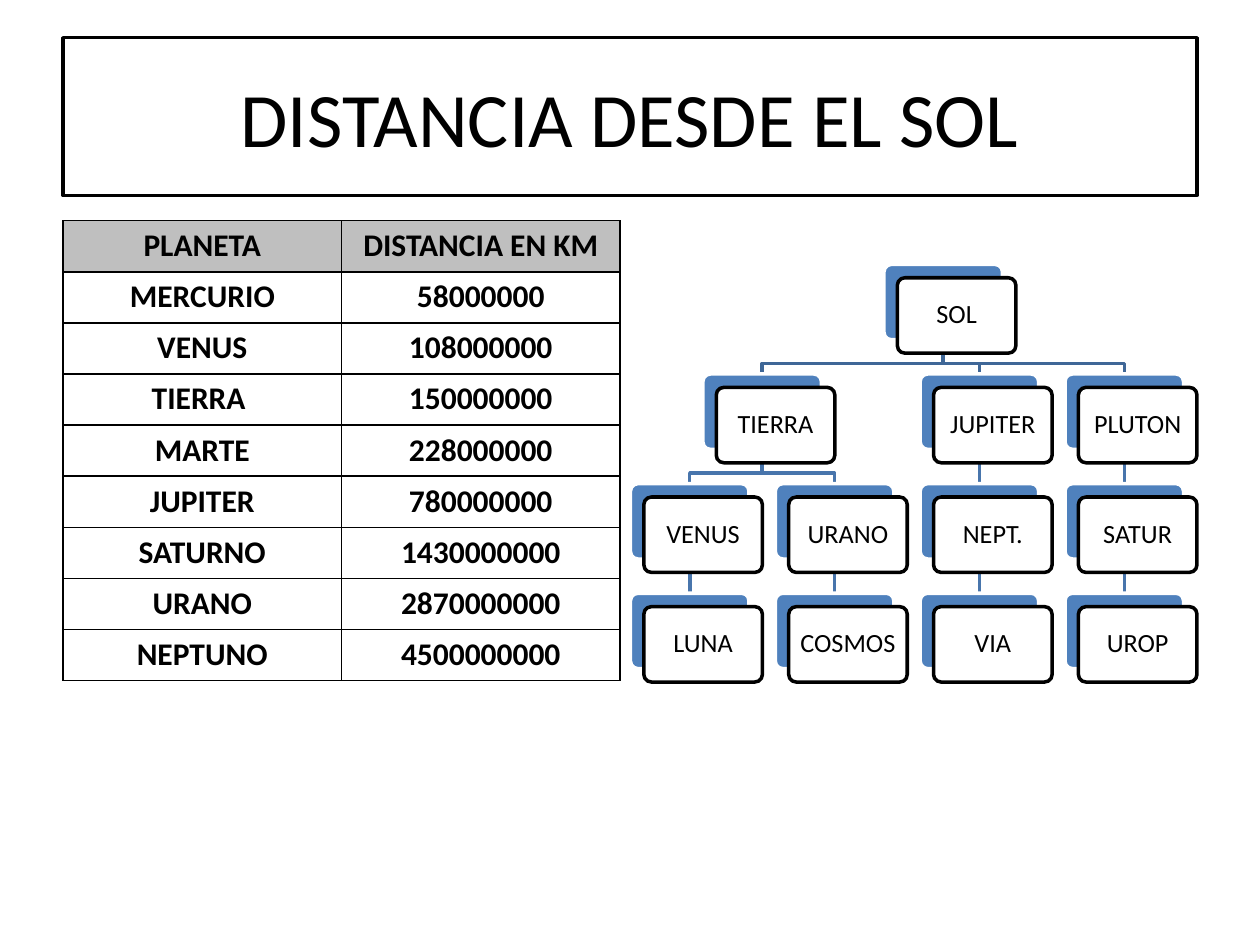
"""Build a slide with planet distances and a tree of the sun."""
import dataclasses
import pptx
import pptx.dml.color
import pptx.enum.shapes
import pptx.enum.text
import pptx.oxml
import pptx.oxml.ns
import pptx.util

Cm = pptx.util.Cm
Pt = pptx.util.Pt
Shape = pptx.enum.shapes.MSO_SHAPE


@dataclasses.dataclass(frozen=True)
class Theme:
    """Hold the colours, font and type sizes."""
    font: str = "Calibri"
    ink: str = "000000"
    paper: str = "FFFFFF"
    head: str = "BFBFBF"
    blue: str = "4F81BD"
    trunk: str = "3F6797"
    branch: str = "4875AC"
    title: int = 44
    cell: int = 18
    node: int = 15
    line: int = 2
    rule: int = 1


class Tree:
    """Map slots and levels of the tree to centimetres."""
    left, top = 12.71, 5.33
    step, drop = 2.92, 2.21
    width, height = 2.39, 1.52
    shift, bend = 0.27, 0.48

    def spot(self, slot, level):
        """Return the left and top of a node."""
        return self.left + slot * self.step, self.top + level * self.drop


class Maker:
    """Draw styled elements on the current slide."""

    def __init__(self, slide, theme):
        """Keep the slide and the theme."""
        self.slide = slide
        self.theme = theme

    def color(self, name):
        """Return the colour of a hex name."""
        return pptx.dml.color.RGBColor.from_string(name)

    def label(self, frame, text, size, bold=False):
        """Put one centred paragraph in a text frame."""
        frame.text = text
        para = frame.paragraphs[0]
        para.alignment = pptx.enum.text.PP_ALIGN.CENTER
        para.font.name = self.theme.font
        para.font.size = Pt(size)
        para.font.bold = bold
        para.font.color.rgb = self.color(self.theme.ink)
        return para

    def stroke(self, line, name):
        """Style a line."""
        line.color.rgb = self.color(name)
        line.width = Pt(self.theme.line)

    def box(self, kind, left, top, width, height, fill, edge):
        """Draw a filled box with an edge."""
        shape = self.slide.shapes.add_shape(
            kind, Cm(left), Cm(top), Cm(width), Cm(height))
        shape.shadow.inherit = False
        shape.fill.solid()
        shape.fill.fore_color.rgb = self.color(fill)
        self.stroke(shape.line, edge)
        return shape

    def title(self, text, *area):
        """Draw the framed title."""
        shape = self.box(Shape.RECTANGLE, *area, self.theme.paper, self.theme.ink)
        shape.text_frame.word_wrap = True
        self.label(shape.text_frame, text, self.theme.title)

    def border(self, cell):
        """Rule all four sides of a cell."""
        space = pptx.oxml.ns.nsdecls("a")
        props = cell._tc.get_or_add_tcPr()
        for side in "LRTB":
            props.append(pptx.oxml.parse_xml(
                f'<a:ln{side} {space} w="{Pt(self.theme.rule)}"><a:solidFill>'
                f'<a:srgbClr val="{self.theme.ink}"/></a:solidFill></a:ln{side}>'))

    def table(self, rows, left, top, width, height):
        """Draw a ruled table with a grey first row."""
        table = self.slide.shapes.add_table(
            len(rows), len(rows[0]), Cm(left), Cm(top), Cm(width), Cm(height)).table
        table.horz_banding = False
        table.first_row = False
        for row, texts in enumerate(rows):
            for col, text in enumerate(texts):
                cell = table.cell(row, col)
                cell.margin_left = cell.margin_right = Cm(0.12)
                cell.margin_top = cell.margin_bottom = Cm(0.12)
                self.border(cell)
                if row:
                    cell.fill.background()
                else:
                    cell.fill.solid()
                    cell.fill.fore_color.rgb = self.color(self.theme.head)
                self.label(cell.text_frame, text, self.theme.cell, True)

    def link(self, start, end, bend, color):
        """Join two points by a straight line or an elbow."""
        (left, top), (right, base) = start, end
        if left == right:
            kind = pptx.enum.shapes.MSO_CONNECTOR.STRAIGHT
            shape = self.slide.shapes.add_connector(
                kind, Cm(left), Cm(top), Cm(right), Cm(base))
            shape._element.spPr.append(
                pptx.oxml.parse_xml(f'<a:effectLst {pptx.oxml.ns.nsdecls("a")}/>'))
        else:
            trail = self.slide.shapes.build_freeform(Cm(left), Cm(top))
            turns = [(left, top + bend), (right, top + bend), (right, base)]
            trail.add_line_segments([(Cm(x), Cm(y)) for x, y in turns], close=False)
            shape = trail.convert_to_shape()
            shape.shadow.inherit = False
            shape.fill.background()
        self.stroke(shape.line, color)

    def node(self, text, left, top, tree):
        """Draw a white card over a blue one."""
        theme = self.theme
        layers = [(0, theme.blue, theme.paper), (tree.shift, theme.paper, theme.ink)]
        for shift, fill, edge in layers:
            card = self.box(Shape.ROUNDED_RECTANGLE, left + shift, top + shift,
                            tree.width, tree.height, fill, edge)
            card.adjustments[0] = 0.1
        frame = card.text_frame
        frame.word_wrap = True
        frame.margin_left = frame.margin_right = Cm(0.19)
        frame.margin_top = frame.margin_bottom = Cm(0.19)
        self.label(frame, text, theme.node).line_spacing = 0.9

    def chart(self, nodes, tree):
        """Draw all links, then all nodes."""
        spots = {name: tree.spot(slot, level) for name, slot, level, _ in nodes}
        half = tree.width / 2
        for name, _, level, boss in nodes:
            if boss:
                left, top = spots[boss]
                right, base = spots[name]
                color = self.theme.trunk if level == 1 else self.theme.branch
                self.link((left + half, top + tree.height),
                          (right + half, base), tree.bend, color)
        for name, spot in spots.items():
            self.node(name, *spot, tree)


ROWS = [
    ("PLANETA", "DISTANCIA EN KM"),
    ("MERCURIO", "58000000"),
    ("VENUS", "108000000"),
    ("TIERRA ", "150000000"),
    ("MARTE", "228000000"),
    ("JUPITER", "780000000"),
    ("SATURNO", "1430000000"),
    ("URANO", "2870000000"),
    ("NEPTUNO", "4500000000"),
]
NODES = [
    ("SOL", 1.75, 0, None),
    ("TIERRA", 0.5, 1, "SOL"),
    ("VENUS", 0, 2, "TIERRA"),
    ("LUNA", 0, 3, "VENUS"),
    ("URANO", 1, 2, "TIERRA"),
    ("COSMOS", 1, 3, "URANO"),
    ("JUPITER", 2, 1, "SOL"),
    ("NEPT.", 2, 2, "JUPITER"),
    ("VIA", 2, 3, "NEPT."),
    ("PLUTON", 3, 1, "SOL"),
    ("SATUR", 3, 2, "PLUTON"),
    ("UROP", 3, 3, "SATUR"),
]


def main():
    """Build and save the deck."""
    deck = pptx.Presentation()
    deck.slide_width, deck.slide_height = Cm(25.4), Cm(19.05)
    maker = Maker(deck.slides.add_slide(deck.slide_layouts[6]), Theme())
    maker.title("DISTANCIA DESDE EL SOL", 1.27, 0.76, 22.86, 3.18)
    maker.table(ROWS, 1.27, 4.45, 11.23, 9.27)
    maker.chart(NODES, Tree())
    deck.save("out.pptx")


if __name__ == "__main__":
    main()
